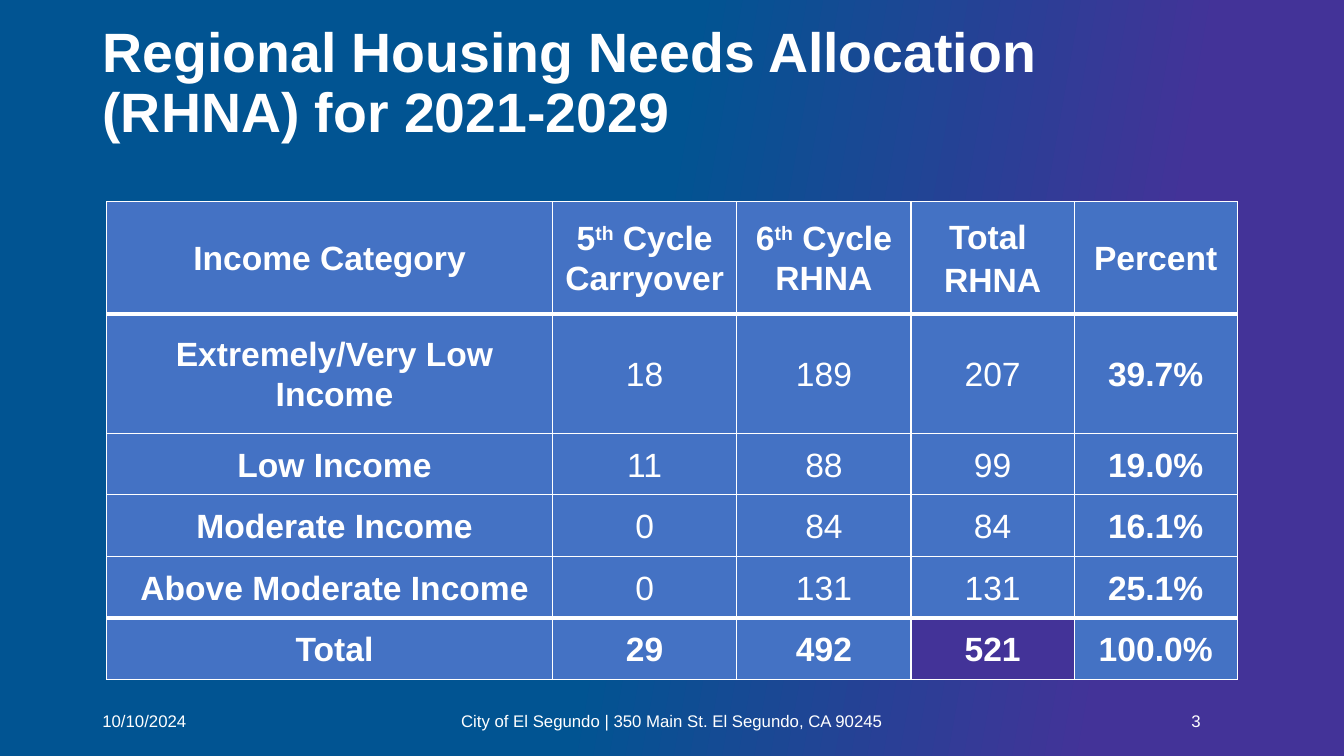
from lxml import etree
from pptx import Presentation
from pptx.dml.color import RGBColor
from pptx.enum.text import MSO_ANCHOR, PP_ALIGN
from pptx.oxml.ns import qn
from pptx.util import Cm, Pt

LEFT, CENTER, RIGHT = PP_ALIGN.LEFT, PP_ALIGN.CENTER, PP_ALIGN.RIGHT
MIDDLE = MSO_ANCHOR.MIDDLE

WHITE = RGBColor(0xFF, 0xFF, 0xFF)
DEEP_BLUE = RGBColor(0x01, 0x54, 0x92)
PURPLE = RGBColor(0x43, 0x33, 0x98)
CELL_BLUE = RGBColor(0x44, 0x72, 0xC4)
FONT = "Arial"

# Text between carets is raised; a newline starts a new paragraph
ROWS = [
    ["Income Category", "5^th^ Cycle Carryover", "6^th^ Cycle RHNA", "Total \nRHNA", "Percent"],
    ["Extremely/Very Low Income", "18", "189", "207", "39.7%"],
    ["Low Income", "11", "88", "99", "19.0%"],
    ["Moderate Income", "0", "84", "84", "16.1%"],
    ["Above Moderate Income", "0", "131", "131", "25.1%"],
    ["Total", "29", "492", "521", "100.0%"],
]
COLUMN_WIDTHS = [11.23, 4.65, 4.39, 4.11, 4.11]
ROW_HEIGHTS = [2.84, 3.0, 1.55, 1.55, 1.55, 1.55]
LAST_ROW = len(ROWS) - 1
LAST_COLUMN = len(COLUMN_WIDTHS) - 1
THICK_RULES = (1, LAST_ROW)  # rows with a thick line above them


def style_font(font, size, bold=False):
    font.name = FONT
    font.size = Pt(size)
    font.bold = bold
    font.color.rgb = WHITE


def paint_background(slide):
    fill = slide.background.fill
    fill.gradient()
    fill.gradient_angle = 350
    for stop, position, color in zip(fill.gradient_stops, (0.47, 0.83), (DEEP_BLUE, PURPLE)):
        stop.position = position
        stop.color.rgb = color


def write_title(slide, text):
    title = slide.shapes.title
    title.left, title.top, title.width, title.height = Cm(2.33), Cm(1.02), Cm(29.21), Cm(3.68)
    frame = title.text_frame
    frame.text = text
    frame.word_wrap = True
    frame.vertical_anchor = MIDDLE
    frame.margin_bottom = Cm(1.57)  # lifts the heading towards the top edge
    para = frame.paragraphs[0]
    para.alignment = LEFT
    para.line_spacing = 0.9
    style_font(para.runs[0].font, 39.6, True)


def add_footer(slide, text, left, width, alignment):
    box = slide.shapes.add_textbox(Cm(left), Cm(17.65), Cm(width), Cm(1.02))
    frame = box.text_frame
    frame.text = text
    frame.word_wrap = True
    frame.vertical_anchor = MIDDLE
    para = frame.paragraphs[0]
    para.alignment = alignment
    style_font(para.runs[0].font, 12)


def add_border(cell, side, points):
    properties = cell._tc.get_or_add_tcPr()
    line = etree.SubElement(properties, qn("a:" + side), w=str(Pt(points)))
    fill = etree.SubElement(line, qn("a:solidFill"))
    etree.SubElement(fill, qn("a:srgbClr"), val=str(WHITE))


def write_cell_text(cell, text, bold, indent):
    frame = cell.text_frame
    for index, line in enumerate(text.split("\n")):
        para = frame.add_paragraph() if index else frame.paragraphs[0]
        para.alignment = CENTER
        para.line_spacing = 1.07
        if index:
            para.space_before = Pt(1.8)
        if indent:
            para._p.get_or_add_pPr().set("marL", str(Cm(0.25)))
        for part, words in enumerate(line.split("^")):
            span = para.add_run()
            span.text = words
            style_font(span.font, 24, bold)
            if part % 2:
                span.font._element.set("baseline", "30000")


def format_cell(cell, row, column):
    cell.margin_left = cell.margin_right = cell.margin_top = cell.margin_bottom = 0
    cell.vertical_anchor = MIDDLE
    add_border(cell, "lnL", 1)
    add_border(cell, "lnR", 1)
    add_border(cell, "lnT", 3 if row in THICK_RULES else 1)
    add_border(cell, "lnB", 3 if row + 1 in THICK_RULES else 1)
    cell.fill.solid()
    is_grand_total = (row, column) == (LAST_ROW, 3)
    cell.fill.fore_color.rgb = PURPLE if is_grand_total else CELL_BLUE


def add_allocation_table(slide):
    frame = slide.shapes.add_table(
        len(ROWS), len(COLUMN_WIDTHS), Cm(2.69), Cm(5.08),
        Cm(sum(COLUMN_WIDTHS)), Cm(sum(ROW_HEIGHTS)))
    table = frame.table
    table.horz_banding = False
    for column, width in zip(table.columns, COLUMN_WIDTHS):
        column.width = Cm(width)
    for row, height in zip(table.rows, ROW_HEIGHTS):
        row.height = Cm(height)
    for row, texts in enumerate(ROWS):
        for column, text in enumerate(texts):
            cell = table.cell(row, column)
            format_cell(cell, row, column)
            bold = row in (0, LAST_ROW) or column in (0, LAST_COLUMN)
            write_cell_text(cell, text, bold, indent=row > 0 and column == 0)


def main():
    deck = Presentation()
    deck.slide_width, deck.slide_height = Cm(33.87), Cm(19.05)
    slide = deck.slides.add_slide(deck.slide_layouts[5])

    # Background and heading
    paint_background(slide)
    write_title(slide, "Regional Housing Needs Allocation (RHNA) for 2021-2029")

    # Allocation by income category
    add_allocation_table(slide)

    # Footer line
    add_footer(slide, "10/10/2024", 2.33, 7.62, LEFT)
    add_footer(slide, "City of El Segundo | 350 Main St. El Segundo, CA 90245", 11.22, 11.43, CENTER)
    add_footer(slide, "3", 29.34, 1.17, RIGHT)

    deck.save("out.pptx")


if __name__ == "__main__":
    main()
